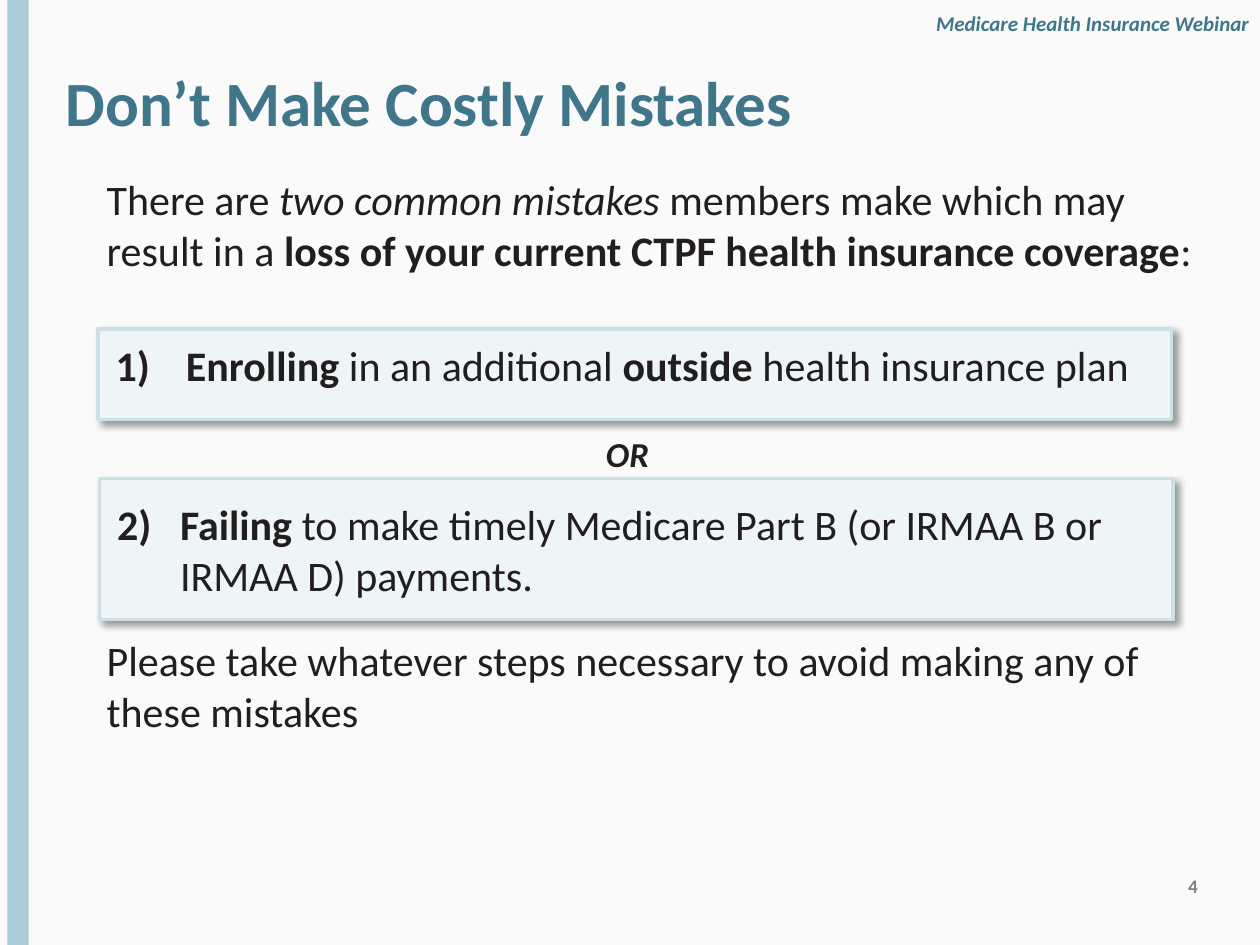
from dataclasses import dataclass

from lxml import etree
from pptx import Presentation
from pptx.dml.color import RGBColor as Rgb
from pptx.enum.shapes import MSO_SHAPE as Shape
from pptx.enum.text import MSO_ANCHOR as Anchor, MSO_AUTO_SIZE as AutoSize, PP_ALIGN as Align
from pptx.oxml.ns import qn
from pptx.util import Cm, Pt


@dataclass(frozen=True)
class Theme:
    font: str = "Calibri"
    backdrop: Rgb = Rgb(0xFA, 0xFA, 0xFA)
    stripe: Rgb = Rgb(0xA8, 0xCD, 0xD7)
    accent: Rgb = Rgb(0x3F, 0x76, 0x8A)
    ink: Rgb = Rgb(0x22, 0x1E, 0x1F)
    muted: Rgb = Rgb(0x80, 0x80, 0x80)
    panel: Rgb = Rgb(0xEE, 0xF5, 0xF7)
    panel_edge: Rgb = Rgb(0xCB, 0xE1, 0xE7)
    title_size: int = 36
    body_size: int = 24
    or_size: int = 20
    header_size: int = 12
    number_size: int = 11


THEME = Theme()

# Each run is (text, style): "b" bold, "i" italic.
TITLE = "Don’t Make Costly Mistakes"
HEADER = "Medicare Health Insurance Webinar"
INTRO = [
    ("There are ", ""),
    ("two common mistakes ", "i"),
    ("members make which may result in a ", ""),
    ("loss of your current CTPF health insurance coverage", "b"),
    (":", ""),
]
# Places are left, top, width, height in centimetres.
MISTAKES = [
    {
        "panel": (1.98, 6.63, 21.64, 1.83),
        "place": (2.08, 6.71, 21.54, 1.27),
        "indent": 1.42,
        "runs": [
            ("Enrolling", "b"),
            (" in an additional ", ""),
            ("outside", "b"),
            (" health insurance plan", ""),
        ],
    },
    {
        "panel": (2.01, 9.65, 21.64, 2.84),
        "place": (2.11, 9.93, 20.47, 2.31),
        "indent": 1.27,
        "runs": [
            ("Failing", "b"),
            (" to make timely Medicare Part B (or IRMAA B or IRMAA D) payments.", ""),
        ],
    },
]
CLOSING = "Please take whatever steps necessary to avoid making any of these mistakes"


def cm(place):
    return [Cm(length) for length in place]


def style(paragraph, size, color, bold=None, italic=None):
    font = paragraph.font
    font.name, font.size, font.color.rgb = THEME.font, Pt(size), color
    font.bold, font.italic = bold, italic


def number(paragraph, start, indent):
    """Number the paragraph as 1), 2) ... with a hanging indent."""
    properties = paragraph._p.get_or_add_pPr()
    properties.set("marL", str(Cm(indent)))
    properties.set("indent", str(-Cm(indent)))
    etree.SubElement(properties, qn("a:buFont"), typeface="+mj-lt")
    etree.SubElement(properties, qn("a:buAutoNum"), type="arabicParenR", startAt=str(start))


def add_text(slide, place, runs, size=THEME.body_size, color=THEME.ink,
             bold=None, italic=None, align=Align.LEFT, wrap=True, numbering=None):
    frame = slide.shapes.add_textbox(*cm(place)).text_frame
    frame.word_wrap = wrap
    paragraph = frame.paragraphs[0]
    paragraph.alignment = align
    if numbering:
        number(paragraph, *numbering)
    style(paragraph, size, color, bold, italic)
    for text, emphasis in runs:
        run = paragraph.add_run()
        run.text = text
        if "b" in emphasis:
            run.font.bold = True
        if "i" in emphasis:
            run.font.italic = True


def add_rectangle(slide, place, fill):
    rectangle = slide.shapes.add_shape(Shape.RECTANGLE, *cm(place))
    rectangle.shadow.inherit = False
    rectangle.fill.solid()
    rectangle.fill.fore_color.rgb = fill
    rectangle.line.fill.background()
    return rectangle


def add_panel(slide, place):
    panel = add_rectangle(slide, place, THEME.panel)
    panel.line.color.rgb = THEME.panel_edge
    panel.line.width = Pt(2.08)
    effects = panel._element.spPr.find(qn("a:effectLst"))
    shadow = etree.SubElement(effects, qn("a:outerShdw"), blurRad=str(Pt(4)), dist=str(Pt(3)),
                              dir=str(45 * 60000), algn="tl", rotWithShape="0")
    shade = etree.SubElement(shadow, qn("a:srgbClr"), val="000000")
    etree.SubElement(shade, qn("a:alpha"), val="40000")


def set_title(slide):
    title = slide.shapes.title
    title.left, title.top, title.width, title.height = cm((1.07, 0.94, 17.98, 2.21))
    frame = title.text_frame
    frame.text = TITLE
    frame.vertical_anchor = Anchor.MIDDLE
    frame.auto_size = AutoSize.NONE
    frame.paragraphs[0].alignment = Align.LEFT
    style(frame.paragraphs[0], THEME.title_size, THEME.accent, bold=True)


def main():
    deck = Presentation()
    deck.slide_width, deck.slide_height = Cm(25.4), Cm(19.05)
    slide = deck.slides.add_slide(deck.slide_layouts[5])
    slide.background.fill.solid()
    slide.background.fill.fore_color.rgb = THEME.backdrop

    add_text(slide, (23.7, 17.5, 2.97, 0.91), [("4", "")],
             THEME.number_size, THEME.muted, bold=True)
    add_text(slide, (18.62, 0.08, 6.93, 0.76), [(HEADER, "")],
             THEME.header_size, THEME.accent, bold=True, italic=True, wrap=False)
    add_rectangle(slide, (0.15, 0, 0.43, 19.05), THEME.stripe)
    set_title(slide)

    add_text(slide, (1.9, 3.38, 22.5, 2.31), INTRO)
    for position, mistake in enumerate(MISTAKES, start=1):
        add_panel(slide, mistake["panel"])
        add_text(slide, mistake["place"], mistake["runs"],
                 numbering=(position, mistake["indent"]))
    add_text(slide, (10.06, 8.59, 5.18, 1.12), [("OR", "")],
             THEME.or_size, bold=True, italic=True, align=Align.CENTER)
    add_text(slide, (1.9, 12.67, 22.5, 2.31), [(CLOSING, "")])

    deck.save("out.pptx")


if __name__ == "__main__":
    main()
